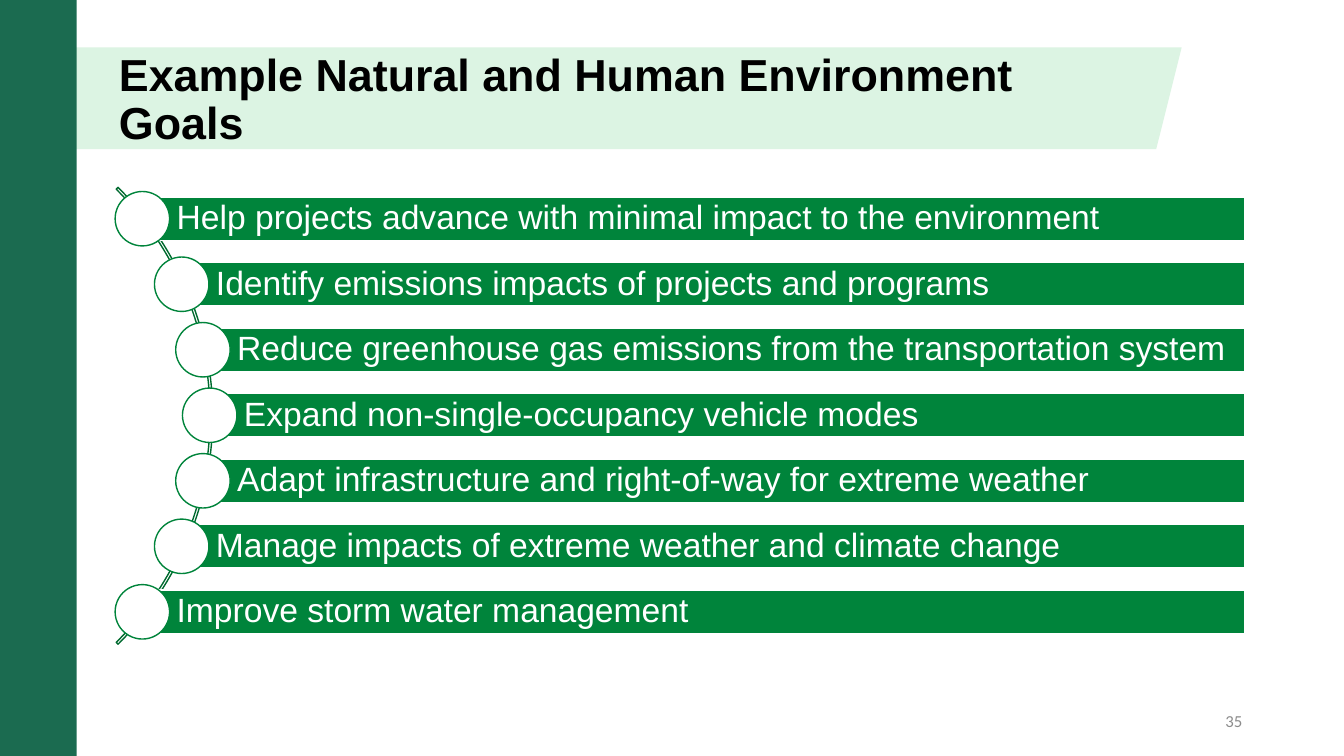
"""Build the slide of natural and human environment goals."""
from math import sqrt
from pptx import Presentation
from pptx.dml.color import RGBColor
from pptx.enum.shapes import MSO_SHAPE
from pptx.enum.text import MSO_ANCHOR, PP_ALIGN
from pptx.util import Inches, Pt


def draw(kind, box, fill=None, line=None):
    shape = slide.shapes.add_shape(kind, *map(Inches, box))
    shape.shadow.inherit = False
    for part, hue in ((shape.fill, fill), (shape.line.fill, line)):
        if hue:
            part.solid()
            part.fore_color.rgb = RGBColor.from_string(hue)
        else:
            part.background()
    if line:
        shape.line.width = Pt(1)
    return shape


def write(shape, text, hue, font, frame, para):
    body = shape.text_frame
    body.text = text
    first = body.paragraphs[0]
    first.font.color.rgb = RGBColor.from_string(hue)
    for part, look in ((first.font, font), (body, frame), (first, para)):
        for name, value in look.items():
            setattr(part, name, value)


GREEN, WHITE = "00843B", "FFFFFF"
goals = [
    "Help projects advance with minimal impact to the environment",
    "Identify emissions impacts of projects and programs",
    "Reduce greenhouse gas emissions from the transportation system",
    "Expand non-single-occupancy vehicle modes",
    "Adapt infrastructure and right-of-way for extreme weather",
    "Manage impacts of extreme weather and climate change",
    "Improve storm water management",
]

deck = Presentation()
deck.slide_width, deck.slide_height = Inches(13.33), Inches(7.5)
slide = deck.slides.add_slide(deck.slide_layouts[5])

draw(MSO_SHAPE.PARALLELOGRAM, (0.24, 0.47, 11.48, 1.01), "DCF4E3")
draw(MSO_SHAPE.RECTANGLE, (0, 0, 0.76, 7.5), "1B6B50")

title = slide.shapes.title
slide.shapes._spTree.append(title._element)
place = {"left": 1.08, "top": 0.47, "width": 9.84, "height": 0.85}
for name, value in place.items():
    setattr(title, name, Inches(value))
write(title, "Example Natural and Human Environment Goals", "000000",
      {"name": "Arial", "size": Pt(32), "bold": True},
      {"vertical_anchor": MSO_ANCHOR.TOP, "word_wrap": True},
      {"alignment": PP_ALIGN.LEFT, "line_spacing": 0.9})

arc = draw(MSO_SHAPE.BLOCK_ARC, (-4.3, 0.92, 6.41, 6.41), line="006A2F")
for i, value in enumerate((189, 27, 0.004)):
    arc.adjustments[i] = value

hub, reach, mid, step = -1.1, 3.18, 4.12, 0.65
right, tall, dot = 12.35, 0.43, 0.54
inset = {"margin_left": Inches(0.34), "vertical_anchor": MSO_ANCHOR.MIDDLE}
for side in ("right", "top", "bottom"):
    inset["margin_" + side] = Inches(0.07)
for i, goal in enumerate(goals):
    drop = (i - len(goals) // 2) * step
    x, y = hub + sqrt(reach ** 2 - drop ** 2), mid + drop
    bar = draw(MSO_SHAPE.RECTANGLE, (x, y - tall / 2, right - x, tall),
               GREEN, WHITE)
    write(bar, goal, WHITE, {"name": "Arial", "size": Pt(24)}, inset,
          {"alignment": PP_ALIGN.LEFT, "line_spacing": 0.9})
    draw(MSO_SHAPE.OVAL, (x - dot / 2, y - dot / 2, dot, dot), WHITE, GREEN)

page = slide.shapes.add_textbox(*map(Inches, (9.42, 6.95, 3, 0.4)))
write(page, "35", "8C8C8C", {"name": "Calibri", "size": Pt(12)},
      {"vertical_anchor": MSO_ANCHOR.MIDDLE, "word_wrap": True},
      {"alignment": PP_ALIGN.RIGHT})

deck.save("out.pptx")
